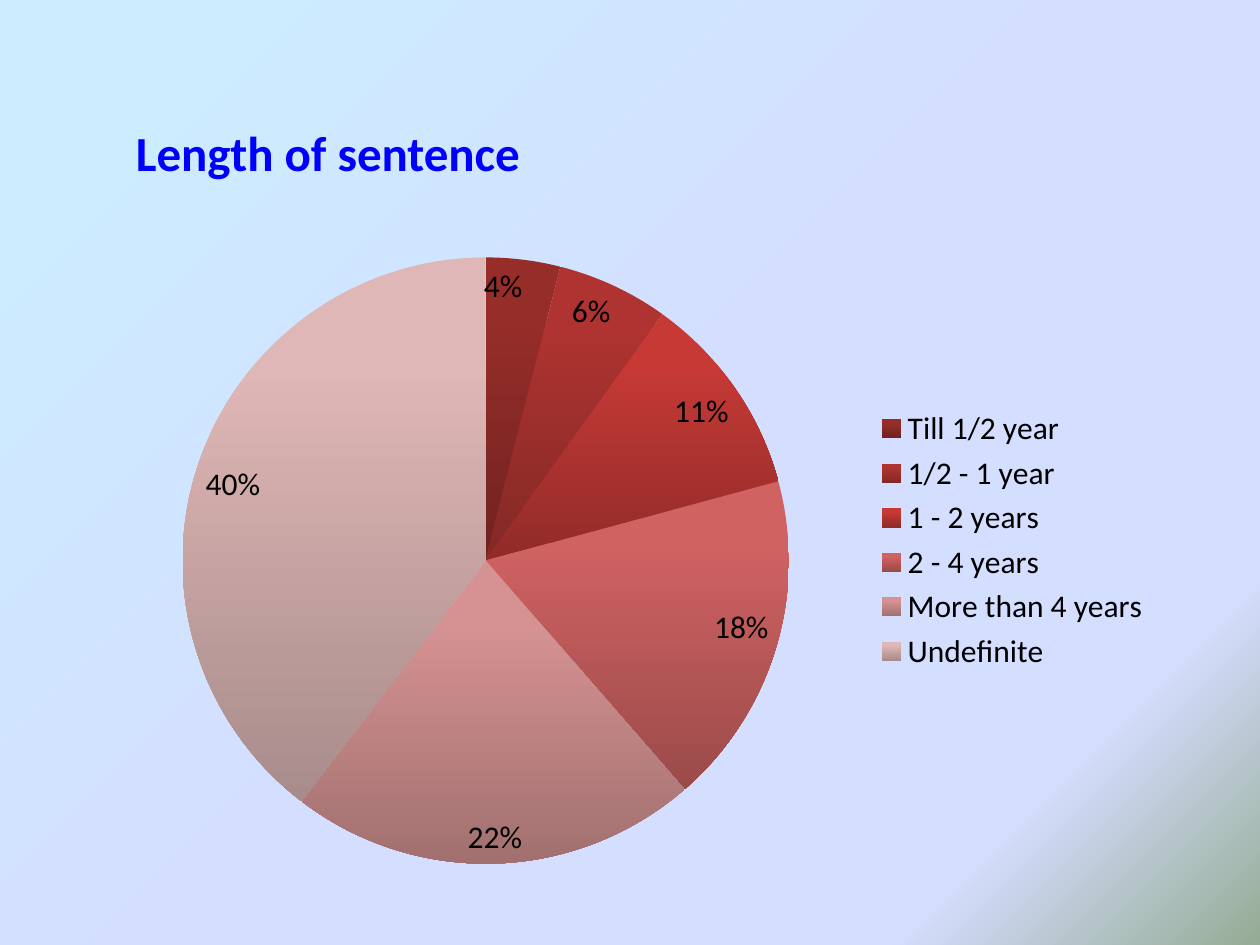
from lxml.etree import SubElement
from pptx import Presentation
from pptx.chart.data import CategoryChartData
from pptx.dml.color import RGBColor
from pptx.enum.chart import XL_CHART_TYPE as ChartType
from pptx.enum.chart import XL_LABEL_POSITION as LabelPosition
from pptx.enum.chart import XL_LEGEND_POSITION as LegendPosition
from pptx.enum.text import MSO_AUTO_SIZE as AutoSize
from pptx.oxml.ns import qn
from pptx.util import Cm, Pt

FONT = "Calibri"
BLUE = RGBColor(0x00, 0x00, 0xFF)
BLACK = RGBColor(0x00, 0x00, 0x00)
ICE = RGBColor(0xCC, 0xEC, 0xFF)
LAVENDER = RGBColor(0xD4, 0xDE, 0xFF)
SAGE = RGBColor(0x96, 0xAB, 0x94)

TITLE = "Length of sentence"
BACKGROUND_STOPS = [(8, ICE), (53, LAVENDER), (83, LAVENDER), (100, SAGE)]
SENTENCES = [
    ("Till 1/2 year", 4, RGBColor(0x96, 0x2D, 0x29), RGBColor(0x70, 0x22, 0x20)),
    ("1/2 - 1 year", 6, RGBColor(0xAF, 0x33, 0x30), RGBColor(0x83, 0x29, 0x26)),
    ("1 - 2 years", 11, RGBColor(0xC6, 0x39, 0x35), RGBColor(0x90, 0x2B, 0x29)),
    ("2 - 4 years", 18, RGBColor(0xD0, 0x62, 0x62), RGBColor(0x9B, 0x4A, 0x4A)),
    ("More than 4 years", 22, RGBColor(0xD6, 0x92, 0x92), RGBColor(0xA2, 0x70, 0x70)),
    ("Undefinite", 40, RGBColor(0xDF, 0xB7, 0xB6), RGBColor(0xA8, 0x8C, 0x8B)),
]
PIE_LAYOUT = {"x": 0.07, "y": 0.09, "w": 0.58, "h": 0.88}


def start_gradient(fill, clockwise_angle):
    fill.gradient()
    fill.gradient_angle = 360 - clockwise_angle


def set_stops(stop_list, stops):
    for old_stop in list(stop_list):
        stop_list.remove(old_stop)
    for percent, color in stops:
        stop = SubElement(stop_list, qn("a:gs"), pos=str(percent * 1000))
        SubElement(stop, qn("a:srgbClr"), val=str(color))


def place_pie(chart):
    plot_area = next(chart.element.iter(qn("c:plotArea")))
    layout = plot_area.find(qn("c:layout"))
    if layout is None:
        layout = SubElement(plot_area, qn("c:layout"))
        plot_area.insert(0, layout)
    manual = SubElement(layout, qn("c:manualLayout"))
    SubElement(manual, qn("c:layoutTarget"), val="inner")
    for side in ("x", "y"):
        SubElement(manual, qn(f"c:{side}Mode"), val="edge")
    for side, share in PIE_LAYOUT.items():
        SubElement(manual, qn(f"c:{side}"), val=str(share))


def add_pie(slide):
    data = CategoryChartData()
    data.categories = [name for name, *_ in SENTENCES]
    data.add_series("Series 1", [value for _, value, *_ in SENTENCES])
    chart = slide.shapes.add_chart(
        ChartType.PIE, Cm(2.11), Cm(3.94), Cm(21.34), Cm(13.89), data
    ).chart
    chart.has_title = False
    chart.font.name = FONT
    chart.font.size = Pt(18)
    chart.font.color.rgb = BLACK
    chart.has_legend = True
    chart.legend.position = LegendPosition.RIGHT
    chart.legend.include_in_layout = False

    plot = chart.plots[0]
    plot.vary_by_categories = True
    plot.has_data_labels = True
    labels = plot.data_labels
    labels.show_value = False
    labels.show_percentage = True
    labels.number_format = "0%"
    labels.number_format_is_linked = False
    labels.position = LabelPosition.INSIDE_END

    for index in range(len(SENTENCES)):
        point_format = plot.series[0].points[index].format
        start_gradient(point_format.fill, 90)
        point_format.line.fill.background()
    for stop_list, (*_, top, bottom) in zip(
        chart.element.iter(qn("a:gsLst")), SENTENCES
    ):
        set_stops(stop_list, [(0, top), (20, top), (100, bottom)])
    place_pie(chart)


def add_title(slide):
    box = slide.shapes.add_textbox(Cm(2.49), Cm(2.34), Cm(8.33), Cm(1.45))
    frame = box.text_frame
    frame.word_wrap = False
    frame.auto_size = AutoSize.SHAPE_TO_FIT_TEXT
    run = frame.paragraphs[0].add_run()
    run.text = TITLE
    run.font.name = FONT
    run.font.size = Pt(28)
    run.font.bold = True
    run.font.color.rgb = BLUE


def main():
    presentation = Presentation()
    presentation.slide_width = Cm(25.4)
    presentation.slide_height = Cm(19.05)
    slide = presentation.slides.add_slide(presentation.slide_layouts[6])
    start_gradient(slide.background.fill, 45)
    set_stops(next(slide.element.iter(qn("a:gsLst"))), BACKGROUND_STOPS)
    add_pie(slide)
    add_title(slide)
    presentation.save("out.pptx")


if __name__ == "__main__":
    main()
